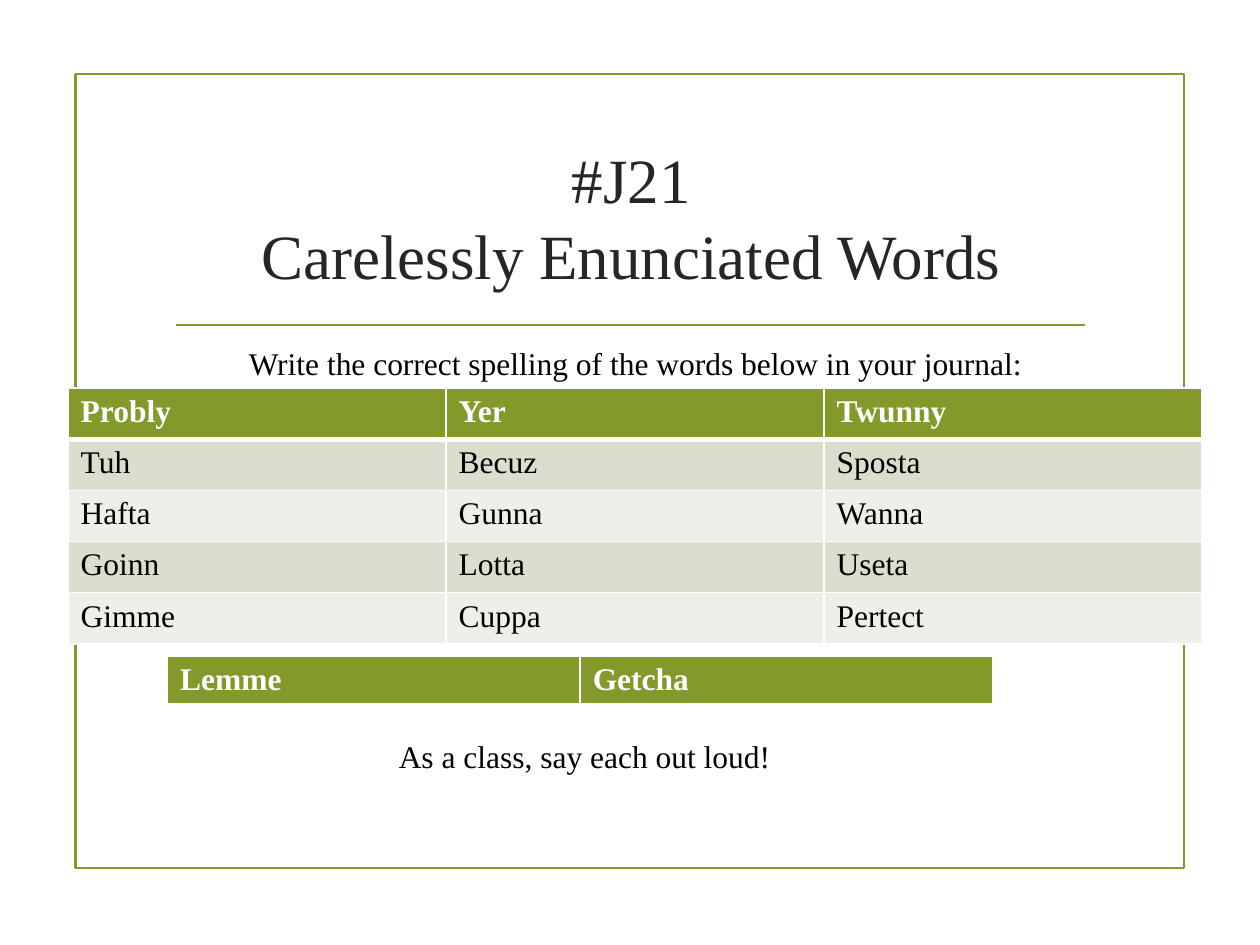
from lxml.etree import SubElement
from pptx import Presentation
from pptx.dml.color import RGBColor
from pptx.enum.shapes import MSO_CONNECTOR, MSO_SHAPE
from pptx.enum.text import MSO_ANCHOR, MSO_AUTO_SIZE, PP_ALIGN
from pptx.oxml.ns import qn
from pptx.util import Inches, Pt

FONT = "Times New Roman"
GREEN, WHITE, BLACK, CHARCOAL = "83992A", "FFFFFF", "000000", "262626"
BANDS = ("D9DECD", "EDEFE8")

WORDS = [
    ["Probly", "Yer", "Twunny"],
    ["Tuh", "Becuz", "Sposta"],
    ["Hafta", "Gunna", "Wanna"],
    ["Goinn", "Lotta", "Useta"],
    ["Gimme", "Cuppa", "Pertect"],
]
EXTRA_WORDS = [["Lemme", "Getcha"]]


def color(value):
    return RGBColor.from_string(value)


def inches(*values):
    return [Inches(value) for value in values]


def format_text(frame, text, fill, size=18, bold=False, align=PP_ALIGN.LEFT):
    frame.text = text
    for para in frame.paragraphs:
        para.alignment = align
        for span in para.runs:
            for name, value in {"name": FONT, "size": Pt(size), "bold": bold}.items():
                setattr(span.font, name, value)
            span.font.color.rgb = color(fill)


def style_line(shape):
    shape.line.color.rgb = color(GREEN)
    shape.line.width = Pt(1.25)


def add_frame(page, *place):
    frame = page.shapes.add_shape(MSO_SHAPE.RECTANGLE, *inches(*place))
    frame.shadow.inherit = False
    frame.fill.background()
    style_line(frame)


def add_rule(page, *ends):
    rule = page.shapes.add_connector(MSO_CONNECTOR.STRAIGHT, *inches(*ends))
    style_line(rule)
    SubElement(rule._element.spPr, qn("a:effectLst"))


def set_title(page, text, *place):
    title = page.shapes.title
    title.left, title.top, title.width, title.height = inches(*place)
    title.text_frame.vertical_anchor = MSO_ANCHOR.MIDDLE
    format_text(title.text_frame, text, CHARCOAL, size=36, align=PP_ALIGN.CENTER)


def add_note(page, text, *place):
    box = page.shapes.add_textbox(*inches(*place))
    box.text_frame.word_wrap = True
    box.text_frame.auto_size = MSO_AUTO_SIZE.SHAPE_TO_FIT_TEXT
    format_text(box.text_frame, text, BLACK, align=PP_ALIGN.CENTER)


def add_borders(cell, bottom):
    properties = cell._tc.get_or_add_tcPr()
    for side, width in {"L": 1, "R": 1, "T": 1, "B": bottom}.items():
        line = SubElement(properties, qn(f"a:ln{side}"), w=str(Pt(width)))
        SubElement(SubElement(line, qn("a:solidFill")), qn("a:srgbClr"), val=WHITE)


def add_word_table(page, rows, *place):
    table = page.shapes.add_table(len(rows), len(rows[0]), *inches(*place)).table
    for row, words in enumerate(rows):
        header = row == 0
        for column, word in enumerate(words):
            cell = table.cell(row, column)
            add_borders(cell, bottom=3 if header else 1)
            cell.fill.solid()
            cell.fill.fore_color.rgb = color(GREEN if header else BANDS[(row - 1) % 2])
            format_text(cell.text_frame, word, WHITE if header else BLACK, bold=header)


def main():
    deck = Presentation()
    deck.slide_width, deck.slide_height = inches(10, 7.5)
    page = deck.slides.add_slide(deck.slide_layouts[5])

    # Border, title and the rule below it
    add_frame(page, 0.6, 0.59, 8.8, 6.3)
    add_rule(page, 1.4, 2.58, 8.61, 2.58)
    set_title(page, "#J21\vCarelessly Enunciated Words", 1.29, 1, 7.44, 1.43)

    # Word tables
    add_word_table(page, WORDS, 0.54, 3.08, 9, 2.03)
    add_word_table(page, EXTRA_WORDS, 1.33, 5.21, 6.55, 0.39)

    # Instructions
    add_note(page, "Write the correct spelling of the words below in your journal:",
             0.59, 2.68, 8.91, 0.4)
    add_note(page, "As a class, say each out loud!", 2.28, 5.8, 4.72, 0.4)

    deck.save("out.pptx")


if __name__ == "__main__":
    main()
